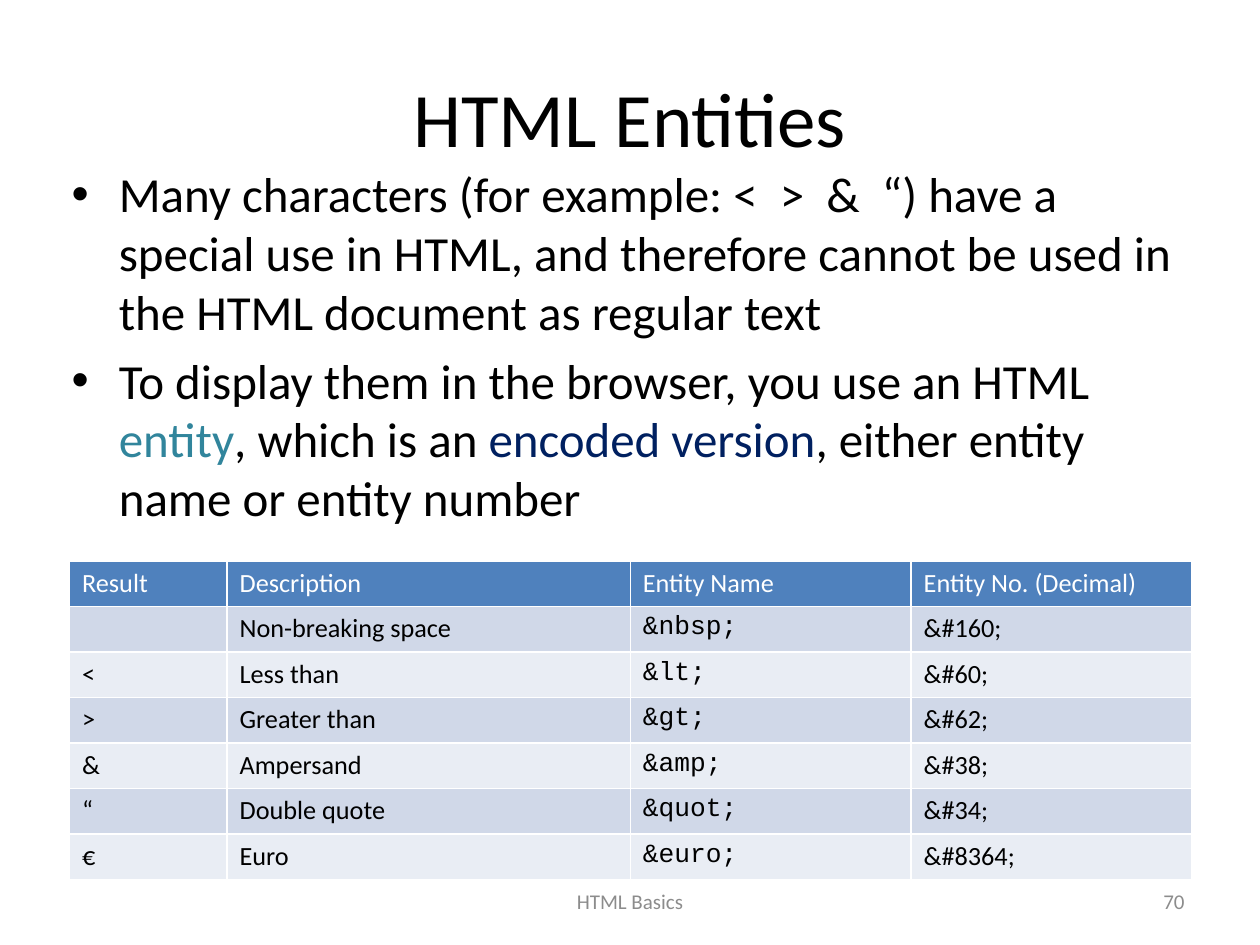
from dataclasses import dataclass

from pptx import Presentation
from pptx.dml.color import RGBColor
from pptx.enum.text import MSO_ANCHOR, PP_ALIGN
from pptx.oxml.ns import qn
from pptx.util import Pt
from lxml import etree

LEFT, CENTER, RIGHT = PP_ALIGN.LEFT, PP_ALIGN.CENTER, PP_ALIGN.RIGHT
TOP, MIDDLE = MSO_ANCHOR.TOP, MSO_ANCHOR.MIDDLE


@dataclass(frozen=True)
class Theme:
    font: str = "Calibri"
    code_font: str = "Courier New"
    title_size: int = 44
    body_size: int = 28
    table_size: int = 15
    footer_size: int = 12
    ink: str = "000000"
    white: str = "FFFFFF"
    entity: str = "31859C"
    encoded: str = "002060"
    header: str = "4F81BD"
    bands: tuple = ("D0D8E8", "E9EDF4")
    muted: str = "8C8C8C"


THEME = Theme()

BULLETS = [
    [("Many characters (for example: <  >  &  “) have a special use in HTML, "
      "and therefore cannot be used in the HTML document as regular text", THEME.ink)],
    [("To display them in the browser, you use an HTML ", THEME.ink),
     ("entity", THEME.entity),
     (", which is an ", THEME.ink),
     ("encoded version", THEME.encoded),
     (", either entity name or entity number", THEME.ink)],
]

ENTITIES = [
    ("Result", "Description", "Entity Name", "Entity No. (Decimal)"),
    ("", "Non-breaking space", "&nbsp;", "&#160;"),
    ("<", "Less than", "&lt;", "&#60;"),
    (">", "Greater than", "&gt;", "&#62;"),
    ("&", "Ampersand", "&amp;", "&#38;"),
    ("“", "Double quote", "&quot;", "&#34;"),
    ("€", "Euro", "&euro;", "&#8364;"),
]
NAME_COLUMN = 2


def write(paragraph, text, size, color=THEME.ink, font=THEME.font, align=LEFT):
    paragraph.alignment = align
    if not text:
        paragraph._p.get_or_add_endParaRPr().set("sz", str(size * 100))
        return
    run = paragraph.add_run()
    run.text = text
    run.font.size = Pt(size)
    run.font.name = font
    run.font.color.rgb = RGBColor.from_string(color)


class SlideBuilder:
    def __init__(self, slide, theme):
        self.slide = slide
        self.theme = theme

    def title(self, text, left, top, width, height):
        title = self.slide.shapes.title
        title.left, title.top = Pt(left), Pt(top)
        title.width, title.height = Pt(width), Pt(height)
        title.text_frame.vertical_anchor = MIDDLE
        write(title.text_frame.paragraphs[0], text, self.theme.title_size, align=CENTER)

    def text_frame(self, left, top, width, height, anchor=TOP):
        box = self.slide.shapes.add_textbox(Pt(left), Pt(top), Pt(width), Pt(height))
        frame = box.text_frame
        frame.word_wrap = True
        frame.vertical_anchor = anchor
        return frame

    def bullets(self, items, left, top, width, height):
        frame = self.text_frame(left, top, width, height)
        for index, pieces in enumerate(items):
            paragraph = frame.add_paragraph() if index else frame.paragraphs[0]
            paragraph.space_before = Pt(5.6)
            for text, color in pieces:
                write(paragraph, text, self.theme.body_size, color)
            properties = paragraph._p.get_or_add_pPr()
            properties.set("marL", str(Pt(27)))
            properties.set("indent", str(Pt(-27)))
            etree.SubElement(properties, qn("a:buFont")).set("typeface", "Arial")
            etree.SubElement(properties, qn("a:buChar")).set("char", "•")

    def footer(self, text, left, width, align):
        frame = self.text_frame(left, 500.5, width, 28.75, MIDDLE)
        write(frame.paragraphs[0], text, self.theme.footer_size, self.theme.muted, align=align)

    def cell_style(self, cell, fill):
        properties = cell._tc.get_or_add_tcPr()
        for side in ("lnL", "lnR", "lnT", "lnB"):
            border = etree.SubElement(properties, qn(f"a:{side}"), w=str(Pt(1)))
            solid = etree.SubElement(border, qn("a:solidFill"))
            etree.SubElement(solid, qn("a:srgbClr"), val=self.theme.white)
        cell.fill.solid()
        cell.fill.fore_color.rgb = RGBColor.from_string(fill)

    def table(self, rows, left, top, widths, row_height):
        theme = self.theme
        table = self.slide.shapes.add_table(
            len(rows), len(widths), Pt(left), Pt(top),
            Pt(sum(widths)), Pt(row_height * len(rows))).table
        for column, width in zip(table.columns, widths):
            column.width = Pt(width)
        for r, values in enumerate(rows):
            table.rows[r].height = Pt(row_height)
            fill = theme.bands[(r - 1) % 2] if r else theme.header
            color = theme.ink if r else theme.white
            for c, value in enumerate(values):
                cell = table.cell(r, c)
                self.cell_style(cell, fill)
                font = theme.code_font if r and c == NAME_COLUMN else theme.font
                write(cell.text_frame.paragraphs[0], value, theme.table_size, color, font)


def main():
    deck = Presentation()
    deck.slide_width, deck.slide_height = Pt(720), Pt(540)
    builder = SlideBuilder(deck.slides.add_slide(deck.slide_layouts[5]), THEME)
    builder.title("HTML Entities", 36, 21.6, 648, 90)
    builder.bullets(BULLETS, 33.84, 90, 648, 356.4)
    builder.table(ENTITIES, 39.75, 320.6, (90, 230.4, 160.5, 160.5), 26)
    builder.footer("70", 516, 168, RIGHT)
    builder.footer("HTML Basics", 246, 228, CENTER)
    deck.save("out.pptx")


if __name__ == "__main__":
    main()
